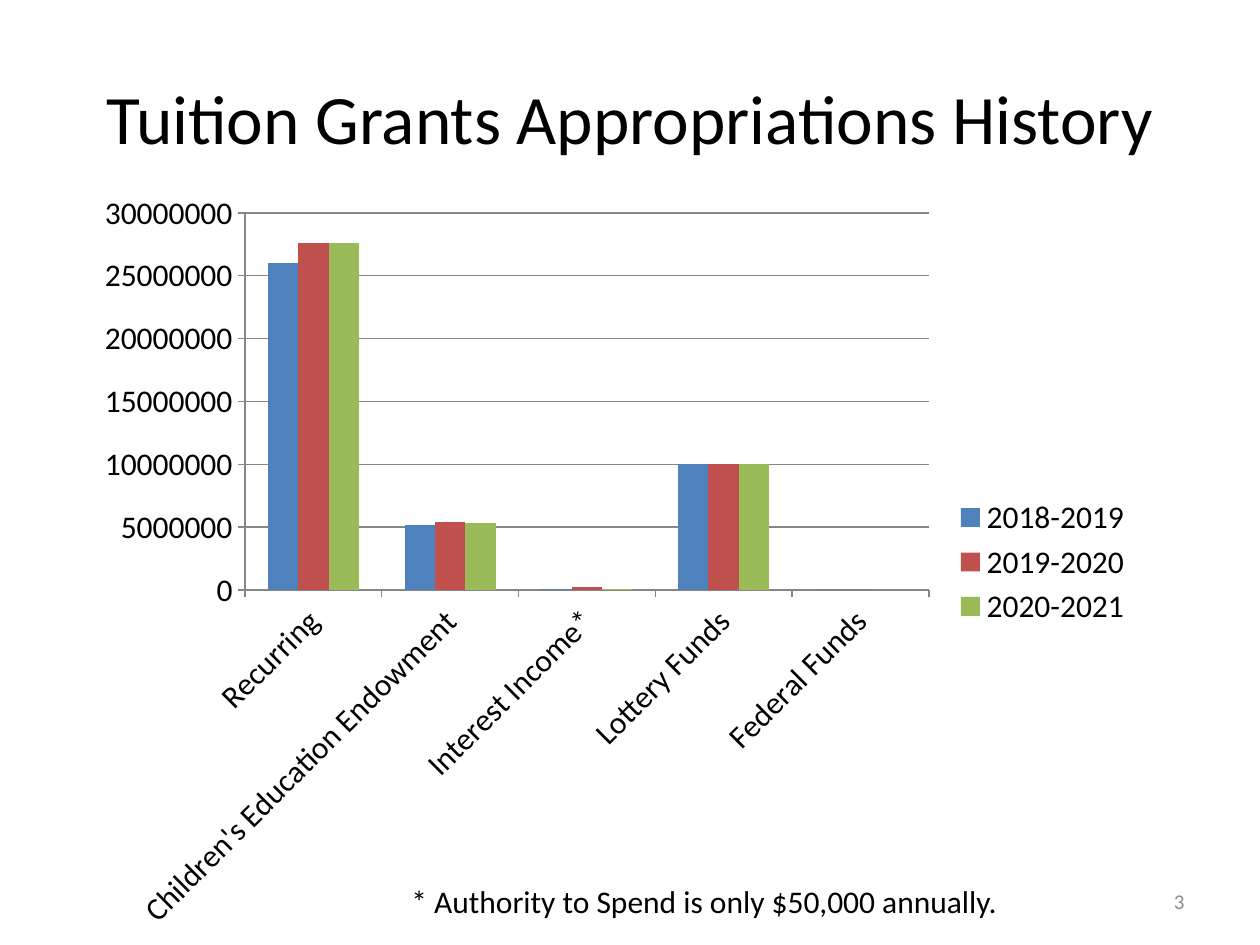
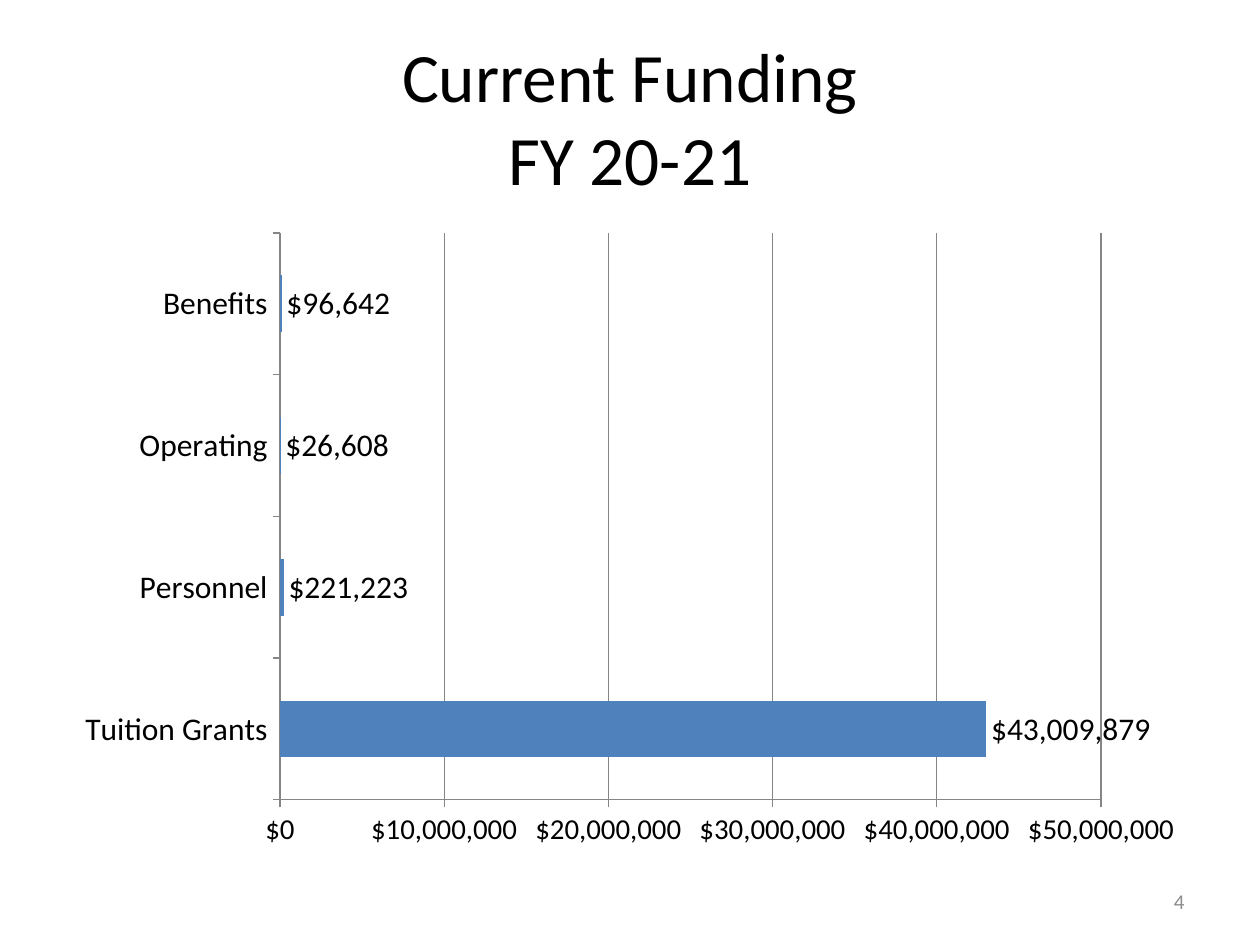
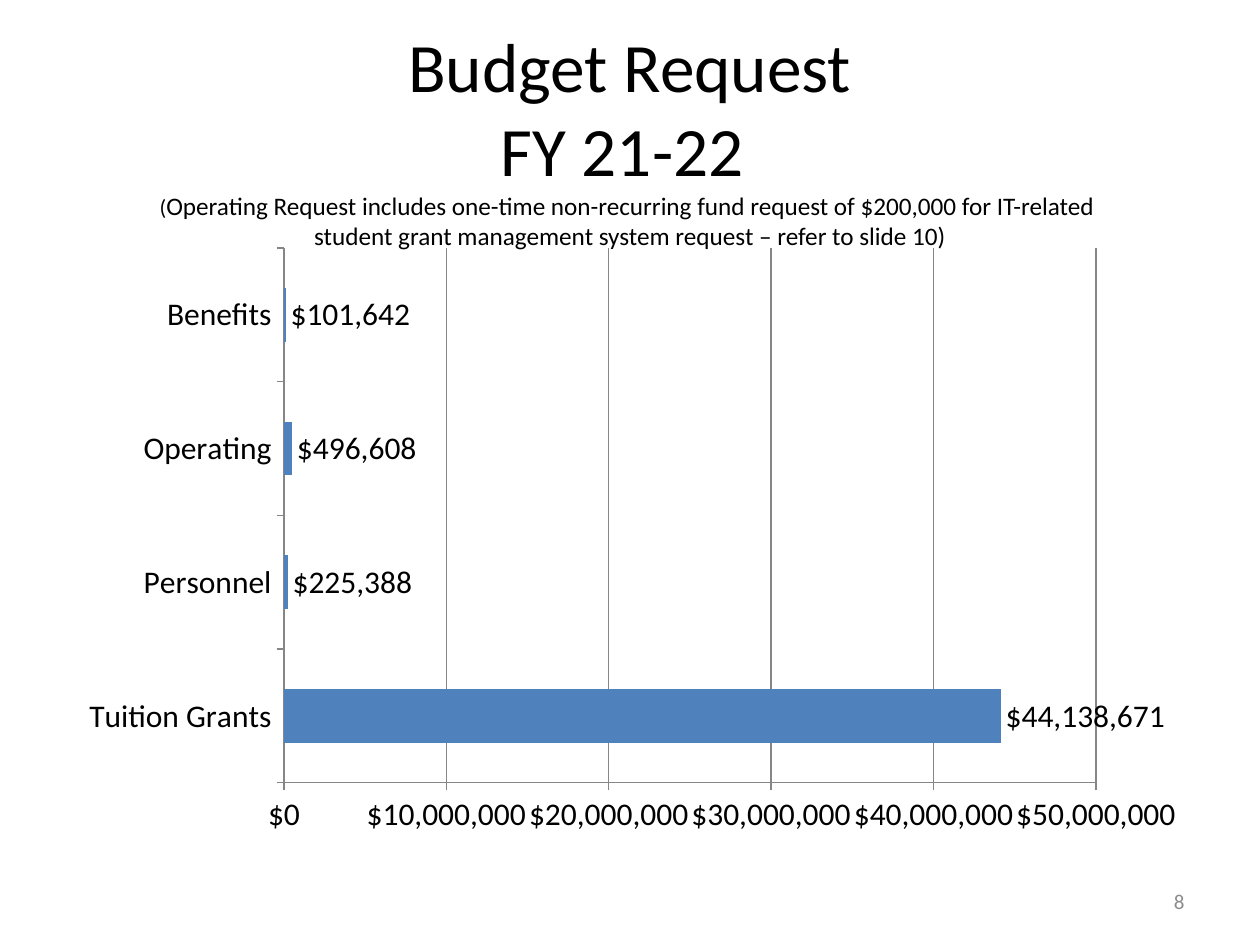
from lxml import etree
from pptx import Presentation
from pptx.chart.data import CategoryChartData
from pptx.dml.color import RGBColor
from pptx.enum.chart import XL_CHART_TYPE, XL_LABEL_POSITION, XL_LEGEND_POSITION, XL_TICK_MARK
from pptx.enum.text import MSO_ANCHOR, MSO_AUTO_SIZE, PP_ALIGN
from pptx.oxml.ns import qn
from pptx.util import Emu, Pt

COLUMNS = XL_CHART_TYPE.COLUMN_CLUSTERED
BARS = XL_CHART_TYPE.BAR_CLUSTERED
OUTSIDE_END = XL_LABEL_POSITION.OUTSIDE_END
LEGEND_RIGHT = XL_LEGEND_POSITION.RIGHT
TICK_OUT = XL_TICK_MARK.OUTSIDE
TICK_NONE = XL_TICK_MARK.NONE
MIDDLE = MSO_ANCHOR.MIDDLE
TOP = MSO_ANCHOR.TOP
NO_AUTOFIT = MSO_AUTO_SIZE.NONE
LEFT, CENTER, RIGHT = PP_ALIGN.LEFT, PP_ALIGN.CENTER, PP_ALIGN.RIGHT

PX_PER_INCH = 126
FONT = "Calibri"
COLORS = {
    "text": "000000",
    "page_number": "8C8C8C",
    "axis": "868686",
    "blue": "4F81BD",
    "red": "C0504D",
    "green": "9BBB59",
}
SERIES_COLORS = ("blue", "red", "green")
TITLE_SIZE = 39.6
BODY_SIZE = 18
DOLLARS = '"$"#,##0'
TITLE_BOX = (63, 38, 1134, 157)
PAGE_NUMBER_BOX = (903, 876, 294, 50)
FUNDING_CATEGORIES = ("Tuition Grants", "Personnel", "Operating", "Benefits")


def px(length):
    return Emu(round(length * 914400 / PX_PER_INCH))


def rgb(name):
    return RGBColor.from_string(COLORS[name])


def style_font(font, size, color="text"):
    font.name = FONT
    font.size = Pt(size)
    font.color.rgb = rgb(color)


def place(shape, box):
    shape.left, shape.top, shape.width, shape.height = map(px, box)


def write(shape, runs, align, anchor, color="text"):
    """Fill a shape with (text, size) runs; a newline in a run is a line break."""
    frame = shape.text_frame
    frame.word_wrap = True
    frame.auto_size = NO_AUTOFIT
    frame.vertical_anchor = anchor
    paragraph = frame.paragraphs[0]
    paragraph.alignment = align
    for text, size in runs:
        for index, line in enumerate(text.split("\n")):
            if index:
                paragraph.add_line_break()
                line_break = paragraph.runs and paragraph._p.findall(qn("a:br"))[-1]
                etree.SubElement(line_break, qn("a:rPr")).set("sz", str(round(size * 100)))
            if line:
                run = paragraph.add_run()
                run.text = line
                style_font(run.font, size, color)


def add_text(slide, box, text, size, align, anchor, color="text"):
    textbox = slide.shapes.add_textbox(*map(px, box))
    write(textbox, [(text, size)], align, anchor, color)


def add_titled_slide(prs, title_runs, page_number, title_box=TITLE_BOX):
    slide = prs.slides.add_slide(prs.slide_layouts[5])
    place(slide.shapes.title, title_box)
    write(slide.shapes.title, title_runs, CENTER, MIDDLE)
    add_text(slide, PAGE_NUMBER_BOX, page_number, 12, RIGHT, MIDDLE, "page_number")
    return slide


def fix_plot_area(chart, chart_box, plot_box):
    """Pin the inner plot area to plot_box, given in slide px."""
    plot_area = chart._chartSpace.chart.plotArea
    for old_layout in plot_area.findall(qn("c:layout")):
        plot_area.remove(old_layout)
    layout = etree.Element(qn("c:layout"))
    plot_area.insert(0, layout)
    manual = etree.SubElement(layout, qn("c:manualLayout"))
    left, top, width, height = chart_box
    settings = {
        "layoutTarget": "inner",
        "xMode": "edge",
        "yMode": "edge",
        "x": (plot_box[0] - left) / width,
        "y": (plot_box[1] - top) / height,
        "w": plot_box[2] / width,
        "h": plot_box[3] / height,
    }
    for tag, value in settings.items():
        etree.SubElement(manual, qn(f"c:{tag}")).set("val", str(value))


def style_axis(axis, size):
    axis.major_tick_mark = TICK_OUT
    axis.minor_tick_mark = TICK_NONE
    style_font(axis.tick_labels.font, size)
    axis.format.line.color.rgb = rgb("axis")
    axis.format.line.width = Pt(0.75)


def add_bar_chart(slide, kind, box, plot_box, categories, series, top_value,
                  step, number_format="General", value_size=BODY_SIZE):
    data = CategoryChartData()
    data.categories = categories
    for name, values in series:
        data.add_series(name, values)
    chart = slide.shapes.add_chart(kind, *map(px, box), data).chart
    style_font(chart.font, BODY_SIZE)
    chart.has_title = False
    chart.has_legend = False
    fix_plot_area(chart, box, plot_box)

    style_axis(chart.category_axis, BODY_SIZE)
    value_axis = chart.value_axis
    style_axis(value_axis, value_size)
    value_axis.minimum_scale = 0
    value_axis.maximum_scale = top_value
    value_axis.major_unit = step
    value_axis.tick_labels.number_format = number_format
    value_axis.tick_labels.number_format_is_linked = False
    value_axis.has_major_gridlines = True
    value_axis.major_gridlines.format.line.color.rgb = rgb("axis")
    value_axis.major_gridlines.format.line.width = Pt(0.75)

    plot = chart.plots[0]
    plot.gap_width = 150
    plot.vary_by_categories = False
    for bars, color in zip(plot.series, SERIES_COLORS):
        bars.format.fill.solid()
        bars.format.fill.fore_color.rgb = rgb(color)
        bars.invert_if_negative = False
    return chart


def add_history_chart(slide):
    chart = add_bar_chart(
        slide, COLUMNS, (84, 179, 1061, 766), (245, 213, 684, 377),
        ("Recurring", "Children's Education Endowment", "Interest Income*",
         "Lottery Funds", "Federal Funds"),
        (("2018-2019", (26000000, 5200000, 100000, 10000000, 0)),
         ("2019-2020", (27600000, 5400000, 200000, 10000000, 0)),
         ("2020-2021", (27600000, 5300000, 100000, 10000000, 0))),
        30000000, 5000000)
    label_body = chart.category_axis._element.find(qn("c:txPr")).find(qn("a:bodyPr"))
    label_body.set("rot", "-2700000")
    label_body.set("vert", "horz")
    chart.has_legend = True
    chart.legend.position = LEGEND_RIGHT
    chart.legend.include_in_layout = False
    style_font(chart.legend.font, BODY_SIZE)


def add_funding_chart(slide, box, plot_box, amounts, value_size=BODY_SIZE):
    chart = add_bar_chart(
        slide, BARS, box, plot_box, FUNDING_CATEGORIES, [("Series 1", amounts)],
        50000000, 10000000, DOLLARS, value_size)
    plot = chart.plots[0]
    plot.has_data_labels = True
    labels = plot.data_labels
    labels.show_value = True
    labels.position = OUTSIDE_END
    labels.number_format = DOLLARS
    labels.number_format_is_linked = False
    style_font(labels.font, BODY_SIZE)


def main():
    prs = Presentation()
    prs.slide_width, prs.slide_height = px(1260), px(945)

    history = add_titled_slide(
        prs, [("Tuition Grants Appropriations History", TITLE_SIZE)], "3")
    add_history_chart(history)
    add_text(history, (399, 876, 683, 50),
             "* Authority to Spend is only $50,000 annually.", BODY_SIZE, LEFT, TOP)

    current = add_titled_slide(prs, [("Current Funding\nFY 20-21", TITLE_SIZE)], "4")
    add_funding_chart(current, (63, 220, 1134, 640), (280, 233, 821, 567),
                      (43009879, 221223, 26608, 96642), 16.5)

    request = add_titled_slide(
        prs,
        [("Budget Request\nFY 21-22 \n", TITLE_SIZE),
         ("(", 12.6),
         ("Operating Request includes one-time non-recurring fund request of $200,000 "
          "for IT-related \nstudent grant management system request – refer to slide 10)",
          14.4)],
        "8", (63, 19, 1134, 236))
    add_funding_chart(request, (63, 220, 1134, 624), (284, 248, 812, 535),
                      (44138671, 225388, 496608, 101642))

    prs.save("out.pptx")


if __name__ == "__main__":
    main()
